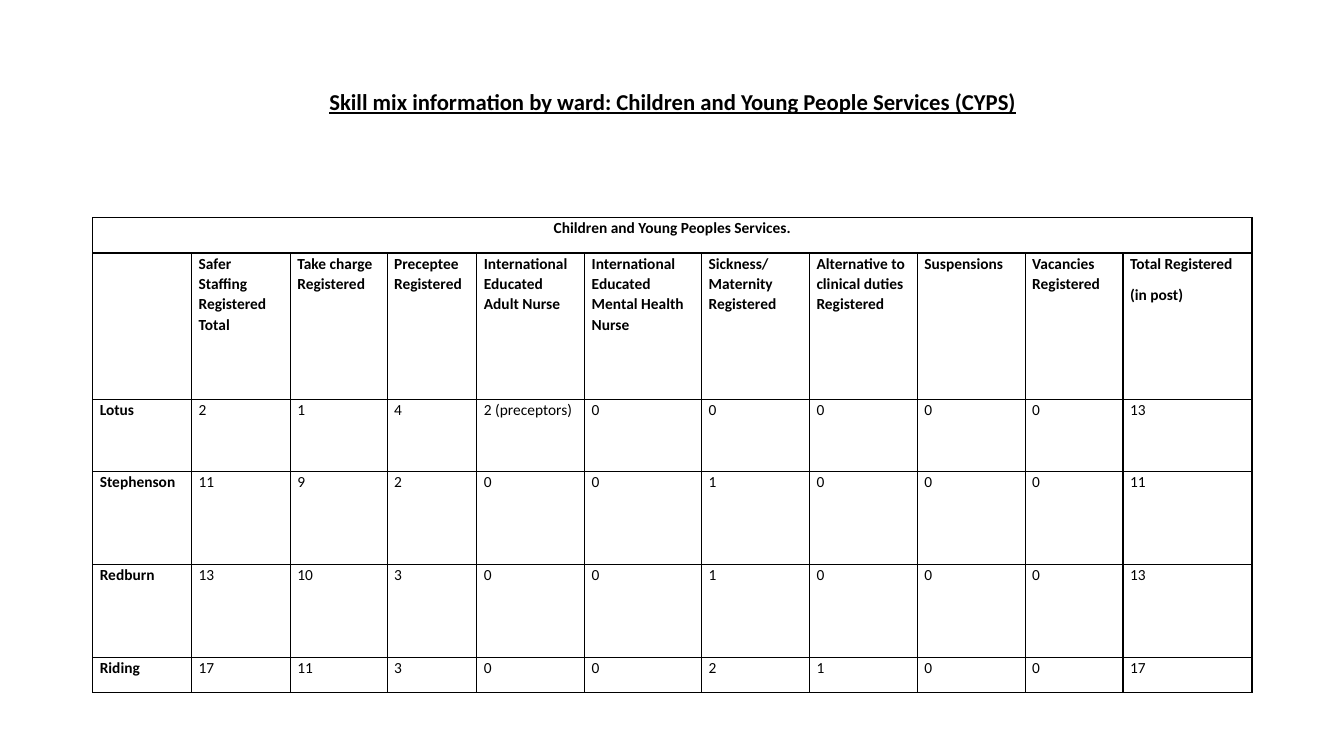
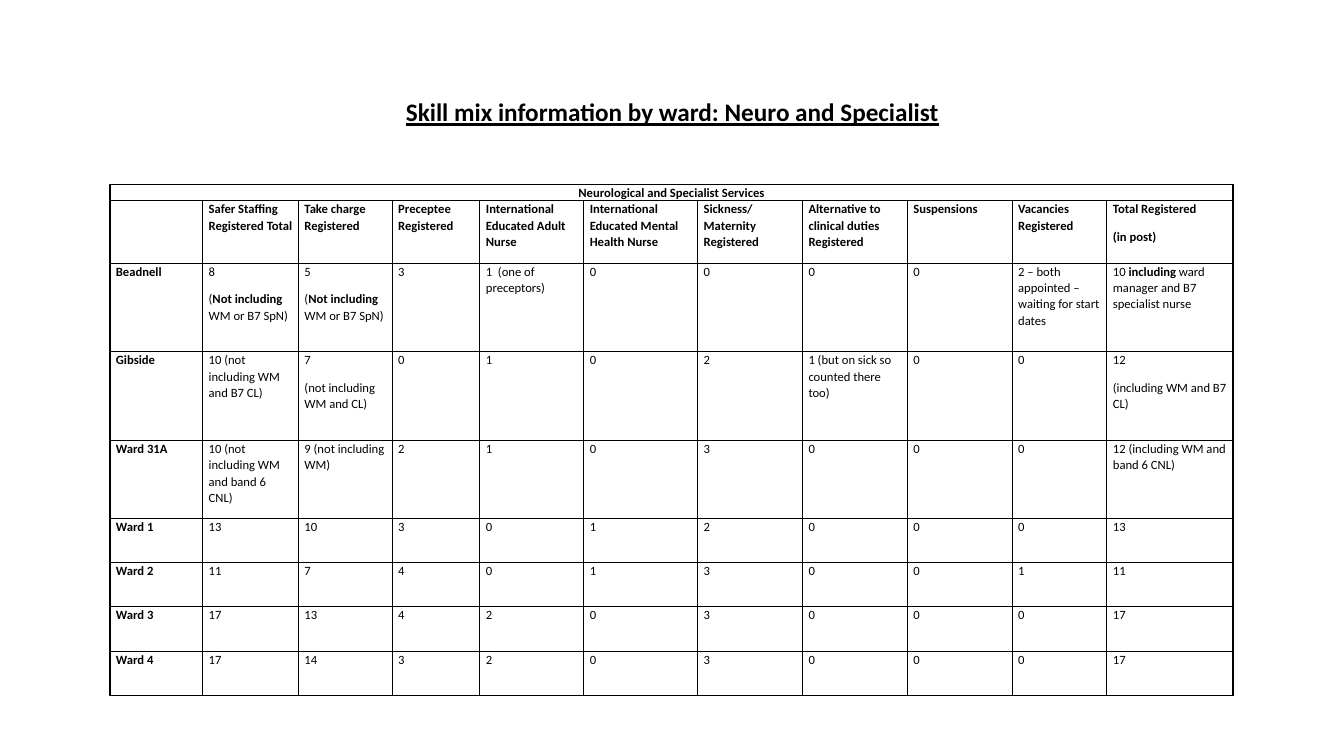
from lxml import etree
from pptx import Presentation
from pptx.dml.color import RGBColor
from pptx.enum import text as t
from pptx.oxml import ns
from pptx.util import Inches, Pt

BLACK = RGBColor(0x00, 0x00, 0x00)
FONT = "Calibri"
BORDER_WIDTH = Pt(1)

HEADINGS = [
    "", "Safer Staffing Registered Total", "Take charge Registered",
    "Preceptee Registered", "International Educated Adult Nurse",
    "International Educated Mental Health Nurse",
    "Sickness/ Maternity Registered",
    "Alternative to clinical duties Registered", "Suspensions",
    "Vacancies Registered", "Total Registered\n(in post)",
]

# In cell text, a line break starts a paragraph and ** switches bold.
CHILDREN_ROWS = [
    ["Lotus", "2", "1", "4", "2 (preceptors)", "0", "0", "0", "0", "0", "13"],
    ["Stephenson", "11", "9", "2", "0", "0", "1", "0", "0", "0", "11"],
    ["Redburn", "13", "10", "3", "0", "0", "1", "0", "0", "0", "13"],
    ["Riding", "17", "11", "3", "0", "0", "2", "1", "0", "0", "17"],
]
NEURO_ROWS = [
    ["Beadnell", "8\n(**Not including** WM or B7 SpN)",
     "5\n(**Not including** WM or B7 SpN)", "3", "1  (one of preceptors)",
     "0", "0", "0", "0", "2 – both appointed – waiting for start dates",
     "10** including** ward manager and B7 specialist nurse"],
    ["Gibside", "10 (not including WM and B7 CL)",
     "7\n(not including WM and CL)", "0", "1", "0", "2",
     "1 (but on sick so counted there too)", "0", "0",
     "12\n(including WM and B7 CL)"],
    ["Ward 31A", "10 (not including WM and band 6 CNL)",
     "9 (not including WM)", "2", "1", "0", "3", "0", "0", "0",
     "12 (including WM and band 6 CNL)"],
    ["Ward 1", "13", "10", "3", "0", "1", "2", "0", "0", "0", "13"],
    ["Ward 2", "11", "7", "4", "0", "1", "3", "0", "0", "1", "11"],
    ["Ward 3", "17", "13", "4", "2", "0", "3", "0", "0", "0", "17"],
    ["Ward 4", "17", "14", "3", "2", "0", "3", "0", "0", "0", "17"],
]


def add_run(paragraph, words, size, bold):
    run = paragraph.add_run()
    run.text = words
    run.font.name = FONT
    run.font.size = Pt(size)
    run.font.bold = bold
    run.font.color.rgb = BLACK
    return run


def add_title(slide, words, size, top):
    box = slide.shapes.add_textbox(Inches(0.92), Inches(top), Inches(11.5), Inches(1.45))
    frame = box.text_frame
    frame.word_wrap = True
    frame.vertical_anchor = t.MSO_ANCHOR.MIDDLE
    paragraph = frame.paragraphs[0]
    paragraph.alignment = t.PP_ALIGN.CENTER
    paragraph.line_spacing = 0.9
    add_run(paragraph, words, size, True).font.underline = True


def add_borders(cell):
    properties = cell._tc.get_or_add_tcPr()
    for side in ("a:lnL", "a:lnR", "a:lnT", "a:lnB"):
        line = etree.SubElement(properties, ns.qn(side), w=str(BORDER_WIDTH))
        fill = etree.SubElement(line, ns.qn("a:solidFill"))
        etree.SubElement(fill, ns.qn("a:srgbClr"), val=str(BLACK))


def fill_cell(cell, words, size, inset, bold, alignment):
    add_borders(cell)
    cell.fill.background()
    cell.margin_left = cell.margin_right = Inches(inset)
    cell.margin_top = cell.margin_bottom = 0
    frame = cell.text_frame
    for index, line in enumerate(words.split("\n")):
        paragraph = frame.add_paragraph() if index else frame.paragraphs[0]
        paragraph.alignment = alignment
        paragraph.line_spacing = 1.07
        paragraph.space_after = Pt(8)
        for part, piece in enumerate(line.split("**")):
            add_run(paragraph, piece, size, bold or part % 2 == 1)


def add_ward_table(slide, left, top, widths, heights, caption, wards, size, inset):
    """Add a table with a caption row, the shared headings and a row per ward."""
    blanks = [""] * (len(HEADINGS) - 1)
    rows = [[caption] + blanks, HEADINGS] + wards
    table = slide.shapes.add_table(
        len(rows), len(widths), Inches(left), Inches(top),
        Inches(sum(widths)), Inches(sum(heights))).table
    table.first_row = table.horz_banding = False
    for column, width in zip(table.columns, widths):
        column.width = Inches(width)
    for row, height in zip(table.rows, heights):
        row.height = Inches(height)
    for row_index, row in enumerate(rows):
        alignment = t.PP_ALIGN.LEFT if row_index else t.PP_ALIGN.CENTER
        for column_index, words in enumerate(row):
            bold = row_index < 2 or column_index == 0
            fill_cell(table.cell(row_index, column_index), words, size, inset,
                      bold, alignment)
    table.cell(0, 0).merge(table.cell(0, len(widths) - 1))


def main():
    presentation = Presentation()
    presentation.slide_width = Inches(13.33)
    presentation.slide_height = Inches(7.5)
    blank = presentation.slide_layouts[6]

    children = presentation.slides.add_slide(blank)
    add_title(children, "Skill mix information by ward: "
              "Children and Young People Services (CYPS)", 16.2, 0.3)
    add_ward_table(
        children, 0.92, 2.16,
        [0.98, 0.98, 0.96, 0.89, 1.07, 1.16, 1.07, 1.07, 1.07, 0.97, 1.28],
        [0.35, 1.45, 0.72, 0.92, 0.92, 0.35],
        "Children and Young Peoples Services.", CHILDREN_ROWS, 11, 0.07)

    neuro = presentation.slides.add_slide(blank)
    add_title(neuro, "Skill mix information by ward: Neuro and Specialist", 18, 0.4)
    add_ward_table(
        neuro, 1.09, 1.83,
        [0.92, 0.95, 0.93, 0.87, 1.03, 1.13, 1.04, 1.04, 1.04, 0.94, 1.25],
        [0.16, 0.62, 0.88, 0.88, 0.77] + [0.44] * 4,
        "Neurological and Specialist Services", NEURO_ROWS, 9, 0.06)

    presentation.save("out.pptx")


if __name__ == "__main__":
    main()
